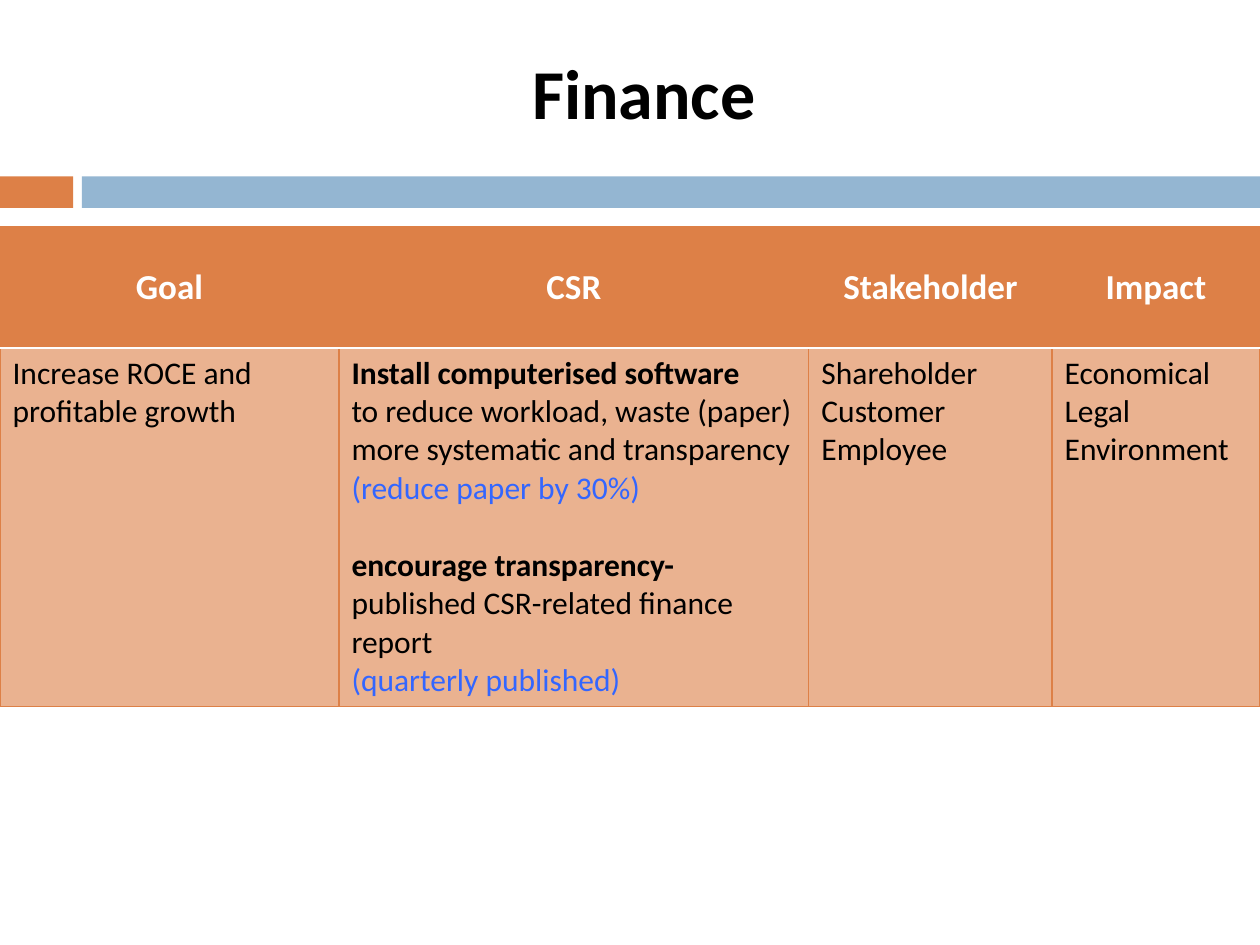
from lxml import etree
from pptx import Presentation
from pptx.dml.color import RGBColor
from pptx.enum.shapes import MSO_SHAPE
from pptx.enum.text import MSO_ANCHOR, PP_ALIGN
from pptx.oxml.ns import qn
from pptx.util import Inches, Pt

RECT = MSO_SHAPE.RECTANGLE
LEFT, CENTER = PP_ALIGN.LEFT, PP_ALIGN.CENTER
TOP, MIDDLE = MSO_ANCHOR.TOP, MSO_ANCHOR.MIDDLE
HEX = {"rust": "DD8047", "sky": "94B6D2", "white": "FFFFFF",
       "black": "000000", "blue": "3366FF"}


def write(frame, paras, size=18, color="black", bold=False, align=LEFT, gaps=()):
    """Each paragraph is a list of (text, format) runs; newlines break lines."""
    frame.word_wrap = True
    for i, runs in enumerate(paras):
        para = frame.paragraphs[0] if i == 0 else frame.add_paragraph()
        para.alignment = align
        if i in gaps:
            para.space_before = Pt(22)
        for text, look in runs:
            for j, line in enumerate(text.split("\n")):
                if j:
                    para.add_line_break()
                if not line:
                    continue
                run = para.add_run()
                run.text = line
                font = run.font
                font.name, font.size = "Calibri", Pt(size)
                font.bold = look.get("bold", bold)
                font.color.rgb = RGBColor.from_string(HEX[look.get("color", color)])


def edge(cell, sides):
    """Draw cell borders, given as (side, colour, width) in schema order."""
    props = cell._tc.get_or_add_tcPr()
    for i, (side, color, width) in enumerate(sides):
        line = etree.Element(qn("a:ln" + side), w=str(Pt(width)))
        fill = etree.SubElement(line, qn("a:solidFill"))
        etree.SubElement(fill, qn("a:srgbClr"), val=HEX[color])
        props.insert(i, line)


prs = Presentation()
prs.slide_width, prs.slide_height = Inches(10), Inches(7.5)
slide = prs.slides.add_slide(prs.slide_layouts[6])

# Bars under the title
for left, width, color in [(0, 0.58, "rust"), (0.65, 9.35, "sky")]:
    bar = slide.shapes.add_shape(RECT, Inches(left), Inches(1.4),
                                 Inches(width), Inches(0.25))
    bar.shadow.inherit = False
    bar.fill.solid()
    bar.fill.fore_color.rgb = RGBColor.from_string(HEX[color])
    bar.line.fill.background()

# Table contents
bold, blue = {"bold": True}, {"color": "blue"}
heads = ["Goal", "CSR", "Stakeholder", "Impact"]
body = [
    [[("Increase ROCE and profitable growth", {})]],
    [[("Install computerised software", bold)],
     [("to reduce workload, waste (paper)\nmore systematic and transparency\n", {}),
      ("(reduce paper by 30%)", blue)],
     [("encourage transparency- ", bold),
      ("published CSR-related finance report", {})],
     [("(quarterly published)", blue)]],
    [[("Shareholder\nCustomer\nEmployee", {})]],
    [[("Economical\nLegal\nEnvironment", {})]],
]

# Table
wide, high = [2.69, 3.73, 1.93, 1.65], [0.96, 2.8]
table = slide.shapes.add_table(2, 4, 0, Inches(1.8), Inches(10),
                               Inches(sum(high))).table
table.first_row = table.horz_banding = False
for row, height in zip(table.rows, high):
    row.height = Inches(height)
for c, width in enumerate(wide):
    table.columns[c].width = Inches(width)
    for r in range(2):
        cell = table.cell(r, c)
        cell.fill.solid()
        cell.fill.fore_color.rgb = RGBColor.from_string(HEX["rust"])
        rule, thin = ("white", 1.5), ("rust", 0.79)
        edge(cell, [("L", *thin), ("R", *thin),
                    ("T", *(rule if r else thin)),
                    ("B", *(thin if r else rule))])
        cell.vertical_anchor = TOP if r else MIDDLE
    write(table.cell(0, c).text_frame, [[(heads[c], {})]], size=20,
          color="white", bold=True, align=CENTER)
    write(table.cell(1, c).text_frame, body[c], gaps=(2,))

    # Tint of the body row
    tint = table.cell(1, c)._tc.tcPr.find(qn("a:solidFill"))[0]
    etree.SubElement(tint, qn("a:alpha"), val="60000")

# Title
title = slide.shapes.add_textbox(Inches(1.71), Inches(0.34), Inches(6.8), Inches(1.08))
write(title.text_frame, [[("Finance", {})]], size=40, bold=True, align=CENTER)

prs.save("out.pptx")
